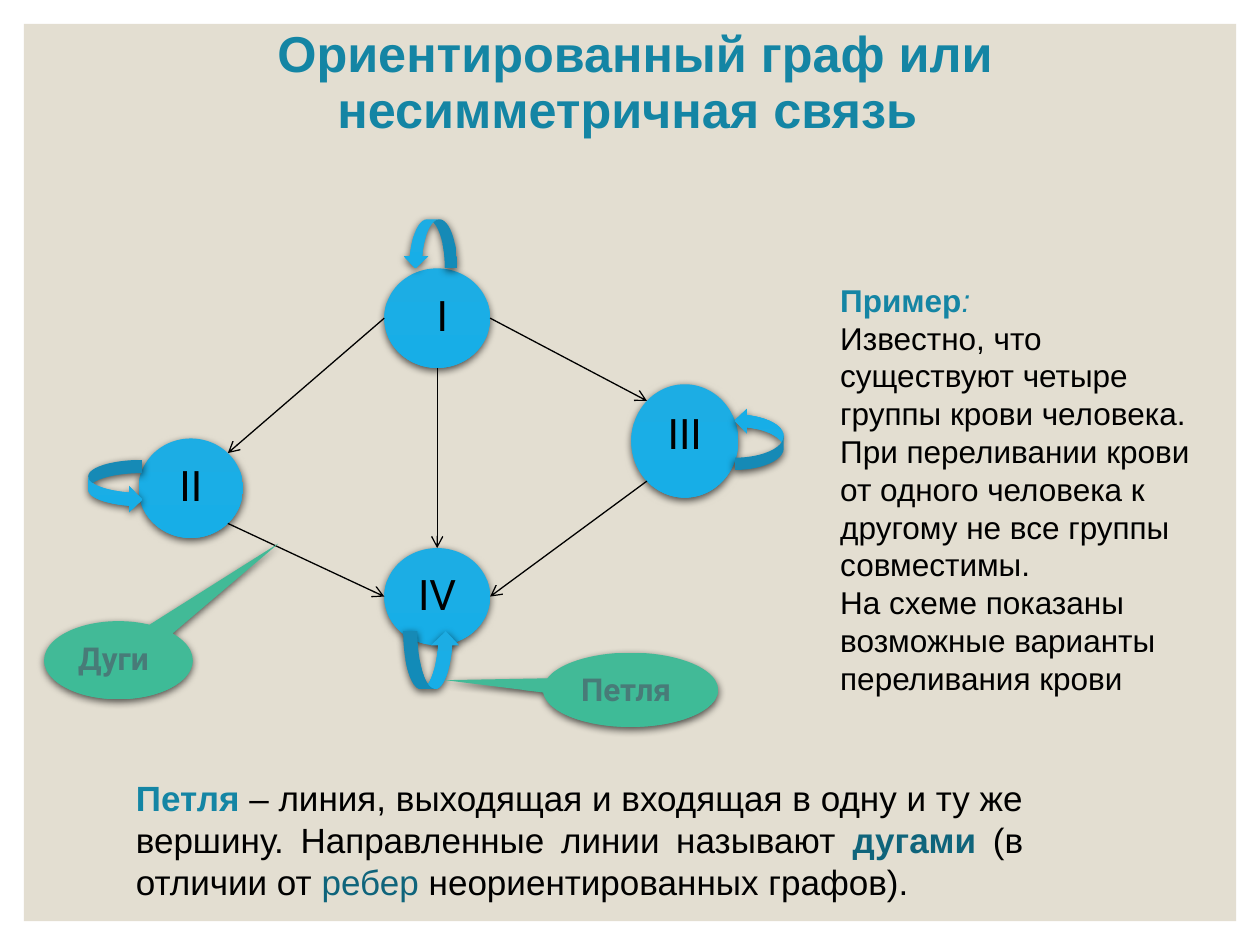
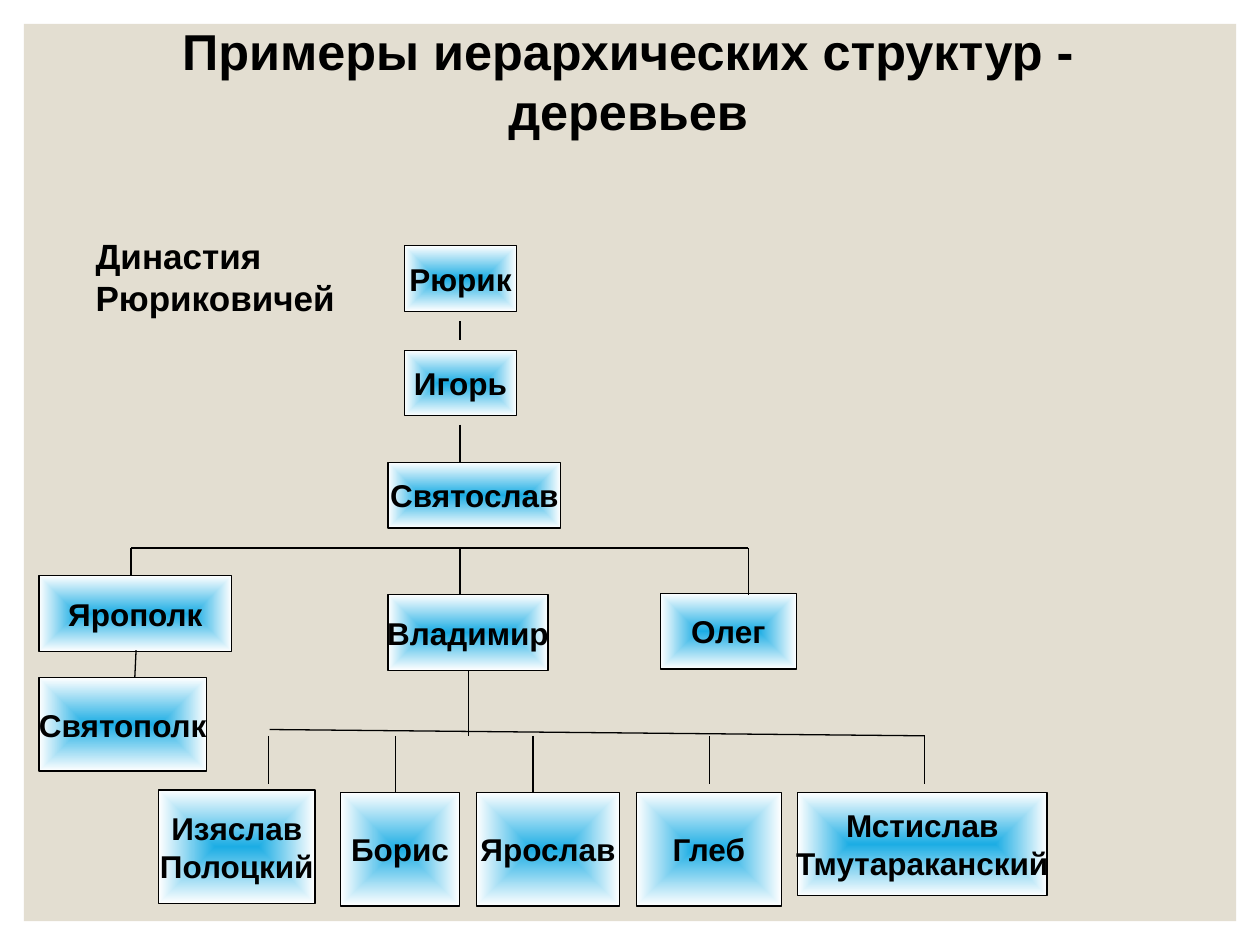
from dataclasses import dataclass
from math import cos, radians, sin

from lxml.etree import SubElement
from pptx import Presentation
from pptx.dml.color import RGBColor
from pptx.enum.shapes import MSO_CONNECTOR, MSO_SHAPE
from pptx.enum.text import MSO_ANCHOR, PP_ALIGN
from pptx.oxml.ns import qn
from pptx.util import Inches, Pt


@dataclass(frozen=True)
class Theme:
    panel: str = "E3DED1"
    ink: str = "000000"
    accent: str = "1485A4"
    deep_accent: str = "0F647B"
    callout_ink: str = "487B78"
    blue: tuple = ("1CADE4", "17AEE7")
    green: tuple = ("42BA97", "3EBB97")
    glow: tuple = ("1CADE4", "FFFFFF")
    font: str = "Arial"
    node_font: str = "Roboto"
    title_size: float = 28.8
    title_lead_size: float = 32.4
    node_size: float = 24
    note_size: float = 20
    body_size: float = 18
    thin: float = 0.75
    thick: float = 1.5


THEME = Theme()


# Text
def run(text, size=THEME.body_size, color=THEME.ink, bold=False, italic=False,
        font=THEME.font):
    return text, size, color, bold, italic, font


def write(frame, paragraphs, align=PP_ALIGN.LEFT, anchor=MSO_ANCHOR.TOP,
          wrap=True, line_spacing=None):
    frame.word_wrap = wrap
    frame.vertical_anchor = anchor
    for index, runs in enumerate(paragraphs):
        paragraph = frame.paragraphs[0] if index == 0 else frame.add_paragraph()
        paragraph.alignment = align
        if line_spacing:
            paragraph.line_spacing = line_spacing
        for text, size, color, bold, italic, font in runs:
            piece = paragraph.add_run()
            piece.text = text
            piece.font.name = font
            piece.font.size = Pt(size)
            piece.font.bold = bold
            piece.font.italic = italic
            piece.font.color.rgb = RGBColor.from_string(color)


def add_text(slide, box, paragraphs, **layout):
    write(slide.shapes.add_textbox(*map(Inches, box)).text_frame, paragraphs, **layout)


def add_title(slide, box, runs, line_spacing=None):
    add_text(slide, box, [runs], align=PP_ALIGN.CENTER, anchor=MSO_ANCHOR.MIDDLE,
             line_spacing=line_spacing)


# Shapes and lines
def add_plain_shape(slide, kind, box):
    shape = slide.shapes.add_shape(kind, *map(Inches, box))
    shape.shadow.inherit = False
    shape.line.fill.background()
    return shape


def fill_gradient(shape, colors, from_center=False):
    shape.fill.gradient()
    for stop, color in zip(shape.fill.gradient_stops, colors):
        stop.color.rgb = RGBColor.from_string(color)
    if not from_center:
        shape.fill.gradient_angle = 270
        return
    gradient = shape._element.spPr.find(qn("a:gradFill"))
    gradient.remove(gradient.find(qn("a:lin")))
    focus = SubElement(gradient, qn("a:path"), path="shape")
    SubElement(focus, qn("a:fillToRect"), l="50000", t="50000", r="50000", b="50000")


def add_raised_shape(slide, kind, box, colors):
    shape = add_plain_shape(slide, kind, box)
    fill_gradient(shape, colors)
    effects = shape._element.spPr.find(qn("a:effectLst"))
    shadow = SubElement(effects, qn("a:outerShdw"), blurRad="57150", dist="19050",
                        dir="5400000", algn="ctr", rotWithShape="0")
    tint = SubElement(shadow, qn("a:srgbClr"), val=THEME.ink)
    SubElement(tint, qn("a:alpha"), val="63000")
    return shape


def add_line(slide, start, end, width=THEME.thin, arrow=False):
    line = slide.shapes.add_connector(MSO_CONNECTOR.STRAIGHT,
                                      *map(Inches, (*start, *end)))
    line.line.color.rgb = RGBColor.from_string(THEME.ink)
    line.line.width = Pt(width)
    if arrow:
        SubElement(line.line._get_or_add_ln(), qn("a:tailEnd"), type="arrow")
    SubElement(line._element.spPr, qn("a:effectLst"))


# Graph parts
def add_vertex(slide, label, box):
    vertex = add_raised_shape(slide, MSO_SHAPE.OVAL, box, THEME.blue)
    write(vertex.text_frame,
          [[run(label, THEME.node_size, font=THEME.node_font)]],
          align=PP_ALIGN.CENTER, wrap=False)


def add_loop(slide, kind, box, flip=None):
    loop = add_raised_shape(slide, kind, box, THEME.blue)
    if flip:
        loop._element.spPr.find(qn("a:xfrm")).set(flip, "1")


def add_callout(slide, label, box, tip):
    callout = add_raised_shape(slide, MSO_SHAPE.OVAL_CALLOUT, box, THEME.green)
    for index, offset in enumerate(tip):
        callout.adjustments[index] = offset
    write(callout.text_frame,
          [[run(label, color=THEME.callout_ink, bold=True, font=THEME.node_font)]],
          wrap=False)


def rim_point(box, degrees):
    """Point on an ellipse, the angle running clockwise from the right."""
    left, top, width, height = box
    angle = radians(degrees)
    return (left + width / 2 * (1 + cos(angle)), top + height / 2 * (1 + sin(angle)))


# Tree parts
def add_person(slide, name_lines, box):
    person = add_plain_shape(slide, MSO_SHAPE.RECTANGLE, box)
    fill_gradient(person, THEME.glow, from_center=True)
    person.line.color.rgb = RGBColor.from_string(THEME.ink)
    person.line.width = Pt(THEME.thin)
    write(person.text_frame, [[run(line, bold=True)] for line in name_lines],
          align=PP_ALIGN.CENTER, anchor=MSO_ANCHOR.MIDDLE, wrap=False)


def add_drops(slide, top, drops):
    for x, bottom in drops:
        add_line(slide, (x, top), (x, bottom))


# Slides
def new_slide(deck):
    slide = deck.slides.add_slide(deck.slide_layouts[6])
    panel = add_plain_shape(slide, MSO_SHAPE.RECTANGLE, (0.19, 0.19, 9.62, 7.12))
    panel.fill.solid()
    panel.fill.fore_color.rgb = RGBColor.from_string(THEME.panel)
    return slide


def build_graph_slide(deck):
    slide = new_slide(deck)
    add_title(slide, (1.06, 0.13, 7.84, 1.03), [
        run(" ", THEME.title_lead_size, bold=True),
        run("Ориентированный граф или несимметричная связь", THEME.title_size,
            THEME.accent, bold=True)], line_spacing=0.9)

    # Vertices, loops and arcs
    vertices = {
        " I": (3.05, 2.13, 0.84, 0.79),
        "II": (1.1, 3.48, 0.83, 0.79),
        "IV": (3.05, 4.35, 0.84, 0.77),
        "III": (5.01, 3.05, 0.85, 0.9),
    }
    for label, box in vertices.items():
        add_vertex(slide, label, box)
    add_loop(slide, MSO_SHAPE.CURVED_UP_ARROW, (3.2, 5.01, 0.45, 0.46))
    add_loop(slide, MSO_SHAPE.CURVED_DOWN_ARROW, (3.2, 1.74, 0.43, 0.39), "flipH")
    add_loop(slide, MSO_SHAPE.CURVED_RIGHT_ARROW, (0.7, 3.65, 0.43, 0.42))
    add_loop(slide, MSO_SHAPE.CURVED_LEFT_ARROW, (5.83, 3.24, 0.39, 0.49), "flipV")
    for donor, exit_angle, recipient, entry_angle in (
            (" I", 0, "III", 225), (" I", 180, "II", 315), ("II", 45, "IV", 180),
            ("III", 135, "IV", 0), (" I", 90, "IV", 270)):
        add_line(slide, rim_point(vertices[donor], exit_angle),
                 rim_point(vertices[recipient], entry_angle), arrow=True)

    # Example
    add_text(slide, (6.57, 2.18, 3.15, 3.43), [
        [run("Пример", color=THEME.accent, bold=True),
         run(":", color=THEME.accent, italic=True)],
        [run("Известно, что существуют четыре группы крови человека. При переливании "
             "крови от одного человека к другому не все группы совместимы.")],
        [run("На схеме показаны возможные варианты переливания крови")]])

    # Callouts and definition
    add_callout(slide, "Дуги", (0.35, 4.93, 1.18, 0.62), (1.08, -1.5))
    add_callout(slide, "Петля", (4.31, 5.18, 1.39, 0.59), (-1.06, -0.13))
    size = THEME.note_size
    add_text(slide, (0.98, 6.11, 7.24, 1.11), [[
        run("Петля ", size, THEME.accent, bold=True),
        run("– линия, выходящая и входящая в одну и ту же вершину. "
            "Направленные линии называют ", size),
        run("дугами", size, THEME.deep_accent, bold=True),
        run(" (в отличии от ", size),
        run("ребер", size, THEME.deep_accent),
        run(" неориентированных графов).", size)]], align=PP_ALIGN.JUSTIFY)


def build_tree_slide(deck):
    slide = new_slide(deck)
    add_title(slide, (1.04, 0.16, 7.89, 0.96), [
        run("Примеры иерархических структур - деревьев", THEME.title_size, bold=True)])

    # People, generation by generation
    for name_lines, box in (
            (["Рюрик"], (3.21, 1.95, 0.89, 0.52)),
            (["Игорь"], (3.21, 2.78, 0.89, 0.52)),
            (["Святослав"], (3.08, 3.67, 1.37, 0.52)),
            (["Ярополк"], (0.31, 4.57, 1.53, 0.6)),
            (["Владимир"], (3.08, 4.72, 1.27, 0.6)),
            (["Олег"], (5.24, 4.71, 1.08, 0.6)),
            (["Святополк"], (0.31, 5.38, 1.33, 0.74)),
            (["Изяслав", "Полоцкий"], (1.26, 6.27, 1.24, 0.9)),
            (["Борис"], (2.7, 6.29, 0.95, 0.9)),
            (["Ярослав"], (3.78, 6.29, 1.14, 0.9)),
            (["Глеб"], (5.05, 6.29, 1.15, 0.9)),
            (["Мстислав", "Тмутараканский"], (6.33, 6.29, 1.98, 0.82))):
        add_person(slide, name_lines, box)

    # Line of descent to Святослав
    trunk = 3.65
    add_line(slide, (trunk, 2.55), (trunk, 2.7), THEME.thick)
    add_line(slide, (trunk, 3.37), (trunk, 3.67))

    # Sons of Святослав
    add_line(slide, (1.04, 4.35), (5.94, 4.35))
    add_drops(slide, 4.35, ((1.04, 4.57), (trunk, 4.72), (5.94, 4.72)))
    add_line(slide, (1.08, 5.16), (1.07, 5.38))

    # Sons of Владимир
    add_line(slide, (3.72, 5.32), (3.72, 5.84))
    add_line(slide, (2.14, 5.79), (7.34, 5.84))
    add_drops(slide, 5.84, ((2.13, 6.22), (3.14, 6.29), (4.23, 6.29),
                            (5.63, 6.22), (7.34, 6.22)))

    add_text(slide, (0.66, 1.81, 2.29, 0.77),
             [[run("Династия Рюриковичей", THEME.note_size, bold=True)]])


def main():
    deck = Presentation()
    deck.slide_width, deck.slide_height = Inches(10), Inches(7.5)
    build_graph_slide(deck)
    build_tree_slide(deck)
    deck.save("out.pptx")


if __name__ == "__main__":
    main()
